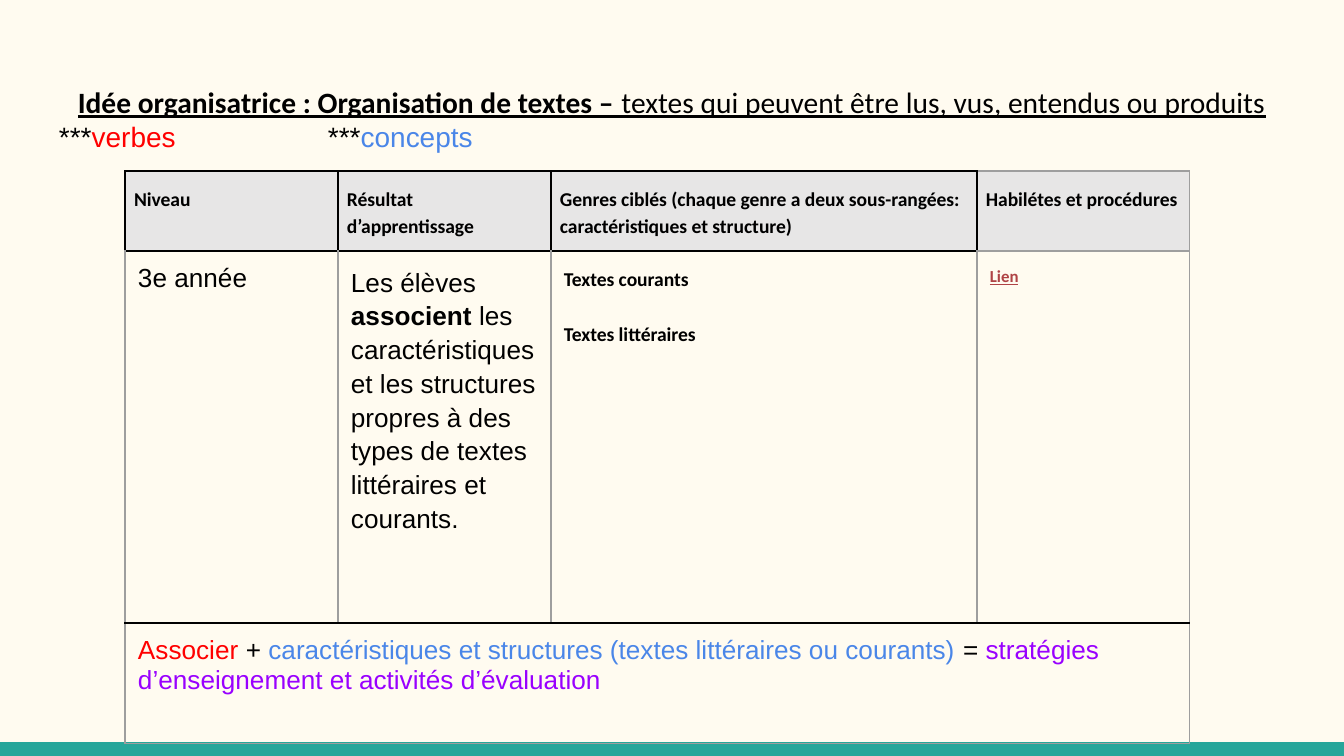
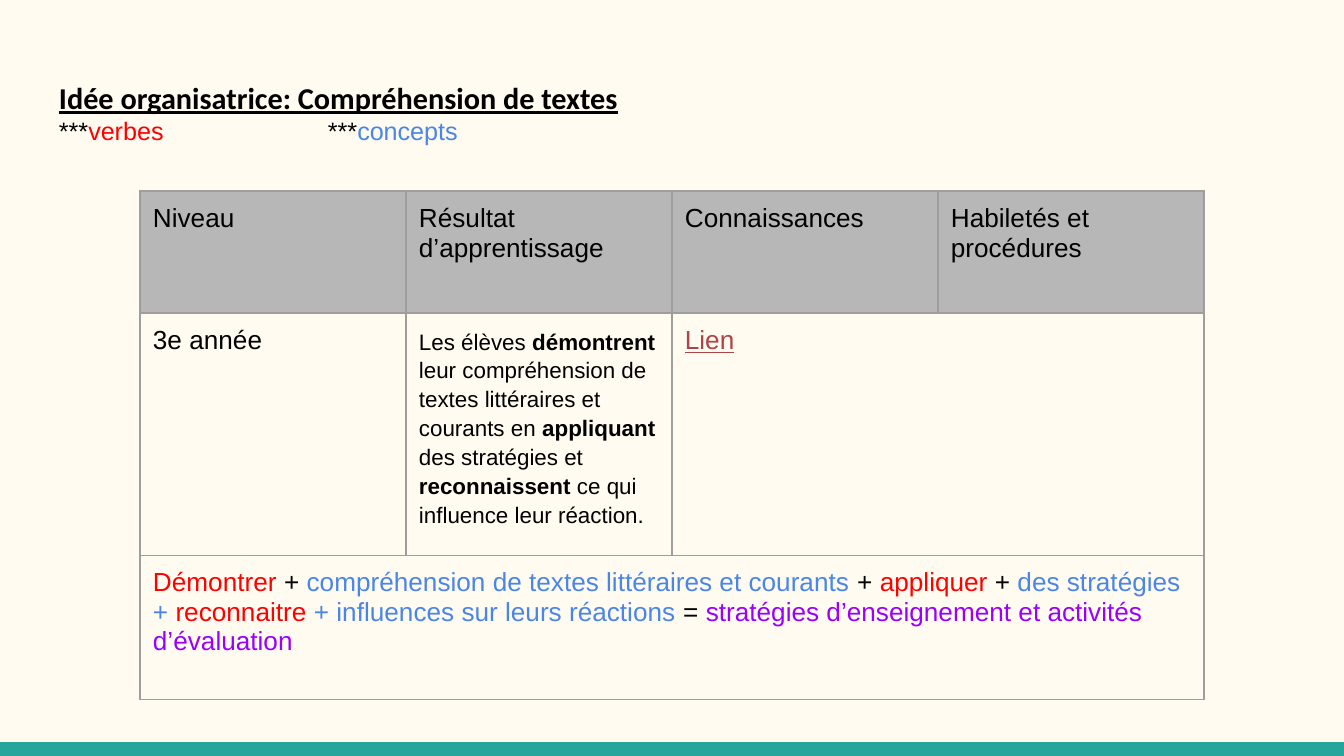
from lxml import etree
from pptx import Presentation
from pptx.dml.color import RGBColor
from pptx.enum.shapes import MSO_SHAPE
from pptx.enum.text import PP_ALIGN
from pptx.oxml.ns import qn
from pptx.util import Pt

RECTANGLE = MSO_SHAPE.RECTANGLE
CENTER = PP_ALIGN.CENTER

PX = 6804
WIDTH, HEIGHT = 1344, 756
INSET = 13
BORDER = Pt(0.75)

CREAM = "FFFBF0"
TEAL = "26A69A"
BLACK = "000000"
RED = "FF0000"
BLUE = "4A86E8"
PURPLE = "9900FF"
LINK = "AF4345"
GREY = "9E9E9E"
LIGHT_HEADER = "E7E6E6"
DARK_HEADER = "B7B7B7"


def color(value):
    return RGBColor.from_string(value)


def write(frame, paragraphs):
    for index, (name, size, spacing, runs) in enumerate(paragraphs):
        paragraph = frame.add_paragraph() if index else frame.paragraphs[0]
        if spacing:
            paragraph.line_spacing = spacing
        paragraph.font.name = name
        paragraph.font.size = Pt(size)
        for text, tint, style in runs:
            run = paragraph.add_run()
            run.text = text
            font = paragraph.font if len(runs) == 1 else run.font
            font.color.rgb = color(tint)
            font.bold = "b" in style
            font.underline = "u" in style


organisation = {
    "title": ("Calibri", 15.8, 1.15, [
        ("Idée organisatrice : Organisation de textes – ", BLACK, "bu"),
        ("textes qui peuvent être lus, vus, entendus ou produits", BLACK, "u"),
    ]),
    "title_align": CENTER,
    "legend_size": 15,
    "place": (125, 171),
    "columns": [213, 213, 426, 213],
    "rows": [70, 372, 121],
    "header_fill": LIGHT_HEADER,
    "header_inset": 9,
    "merges": [(2, 0, 2, 3)],
    "black_sides": {
        (0, 0): "LRTB", (0, 1): "LRTB", (0, 2): "LRTB", (0, 3): "L",
        (1, 0): "TB", (1, 1): "TB", (1, 2): "TB", (1, 3): "B",
        (2, 0): "T", (2, 1): "T", (2, 2): "T", (2, 3): "T",
    },
    "header": ("Calibri", 10.5, 1.15, "b", [
        "Niveau",
        "Résultat d’apprentissage",
        "Genres ciblés (chaque genre a deux sous-rangées: caractéristiques et structure)",
        "Habilétes et procédures",
    ]),
    "cells": {
        (1, 0): [("Arial", 14, None, [("3e année", BLACK, "")])],
        (1, 1): [("Arial", 14, 1.15, [
            ("Les élèves", BLACK, ""),
            (" associent ", BLACK, "b"),
            ("les caractéristiques et les structures propres à des types de "
             "textes littéraires et courants.", BLACK, ""),
        ])],
        (1, 2): [
            ("Calibri", 10.5, 1.15, [("Textes courants", BLACK, "b")]),
            ("Calibri", 10.5, 1.15, [("Textes littéraires", BLACK, "b")]),
        ],
        (1, 3): [("Calibri", 9, 1.15, [("Lien", LINK, "bu")])],
        (2, 0): [("Arial", 14, None, [
            ("Associer ", RED, ""),
            ("+ ", BLACK, ""),
            ("caractéristiques et structures (textes littéraires ou courants)", BLUE, ""),
            (" = ", BLACK, ""),
            ("stratégies d’enseignement et activités d’évaluation", PURPLE, ""),
        ])],
    },
}

comprehension = {
    "title": ("Calibri", 16.2, None, [
        ("Idée organisatrice: Compréhension de textes", BLACK, "bu"),
    ]),
    "title_align": None,
    "legend_size": 13.5,
    "place": (140, 191),
    "columns": [266] * 4,
    "rows": [122, 239, 144],
    "header_fill": DARK_HEADER,
    "header_inset": INSET,
    "merges": [(1, 2, 1, 3), (2, 0, 2, 3)],
    "black_sides": {},
    "header": ("Arial", 14, None, "", [
        "Niveau",
        "Résultat d’apprentissage",
        "Connaissances",
        "Habiletés et procédures",
    ]),
    "cells": {
        (1, 0): [("Arial", 14, None, [("3e année", BLACK, "")])],
        (1, 1): [("Arial", 12, 1.15, [
            ("Les élèves ", BLACK, ""),
            ("démontrent", BLACK, "b"),
            (" leur compréhension de textes littéraires et courants en ", BLACK, ""),
            ("appliquant ", BLACK, "b"),
            ("des stratégies et ", BLACK, ""),
            ("reconnaissent", BLACK, "b"),
            (" ce qui influence leur réaction.", BLACK, ""),
        ])],
        (1, 2): [("Arial", 14, None, [("Lien", LINK, "u")])],
        (2, 0): [("Arial", 14, None, [
            ("Démontrer ", RED, ""),
            ("+ ", BLACK, ""),
            ("compréhension de textes littéraires et courants ", BLUE, ""),
            ("+ ", BLACK, ""),
            ("appliquer", RED, ""),
            (" + ", BLACK, ""),
            ("des stratégies + ", BLUE, ""),
            ("reconnaitre", RED, ""),
            (" + influences sur leurs réactions ", BLUE, ""),
            ("= ", BLACK, ""),
            ("stratégies d’enseignement et activités d’évaluation", PURPLE, ""),
        ])],
    },
}

presentation = Presentation()
presentation.slide_width = WIDTH * PX
presentation.slide_height = HEIGHT * PX

for content in (organisation, comprehension):
    slide = presentation.slides.add_slide(presentation.slide_layouts[6])
    slide.background.fill.solid()
    slide.background.fill.fore_color.rgb = color(CREAM)

    band = slide.shapes.add_shape(RECTANGLE, 0, 742 * PX, WIDTH * PX, 14 * PX)
    band.shadow.inherit = False
    band.fill.solid()
    band.fill.fore_color.rgb = color(TEAL)
    band.line.fill.background()

    title = slide.shapes.add_textbox(46 * PX, 66 * PX, 1252 * PX, 90 * PX)
    frame = title.text_frame
    frame.word_wrap = True
    frame.margin_left = frame.margin_right = INSET * PX
    frame.margin_top = frame.margin_bottom = INSET * PX
    legend = ("Arial", content["legend_size"], None, [
        ("***", BLACK, ""),
        ("verbes", RED, ""),
        ("\t***", BLACK, ""),
        ("concepts", BLUE, ""),
    ])
    write(frame, [content["title"], legend])
    frame.paragraphs[0].alignment = content["title_align"]
    tabs = etree.Element(qn("a:tabLst"))
    etree.SubElement(tabs, qn("a:tab"), pos=str(269 * PX), algn="l")
    frame.paragraphs[1]._p.get_or_add_pPr().insert(0, tabs)

    columns, rows = content["columns"], content["rows"]
    left, top = content["place"]
    table = slide.shapes.add_table(
        len(rows), len(columns), left * PX, top * PX, sum(columns) * PX, sum(rows) * PX
    ).table
    table.first_row = False
    table.horz_banding = False
    for column, width in zip(table.columns, columns):
        column.width = width * PX
    for row, height in zip(table.rows, rows):
        row.height = height * PX
    for first_row, first_column, last_row, last_column in content["merges"]:
        table.cell(first_row, first_column).merge(table.cell(last_row, last_column))

    name, size, spacing, style, labels = content["header"]
    cells = dict(content["cells"])
    for index, label in enumerate(labels):
        cells[0, index] = [(name, size, spacing, [(label, BLACK, style)])]

    for row_index in range(len(rows)):
        for column_index in range(len(columns)):
            position = (row_index, column_index)
            cell = table.cell(row_index, column_index)
            is_header = row_index == 0
            side_inset = content["header_inset"] if is_header else INSET
            cell.margin_left = cell.margin_right = side_inset * PX
            cell.margin_top = cell.margin_bottom = INSET * PX
            properties = cell._tc.get_or_add_tcPr()
            black_sides = content["black_sides"].get(position, "")
            for side in "LRTB":
                line = etree.SubElement(properties, qn("a:ln" + side), w=str(BORDER))
                fill = etree.SubElement(line, qn("a:solidFill"))
                tint = BLACK if side in black_sides else GREY
                etree.SubElement(fill, qn("a:srgbClr"), val=tint)
            if is_header:
                cell.fill.solid()
                cell.fill.fore_color.rgb = color(content["header_fill"])
            else:
                cell.fill.background()
            if position in cells:
                write(cell.text_frame, cells[position])
                for paragraph in cell.text_frame.paragraphs[1:]:
                    paragraph.space_before = Pt(15)

presentation.save("out.pptx")
